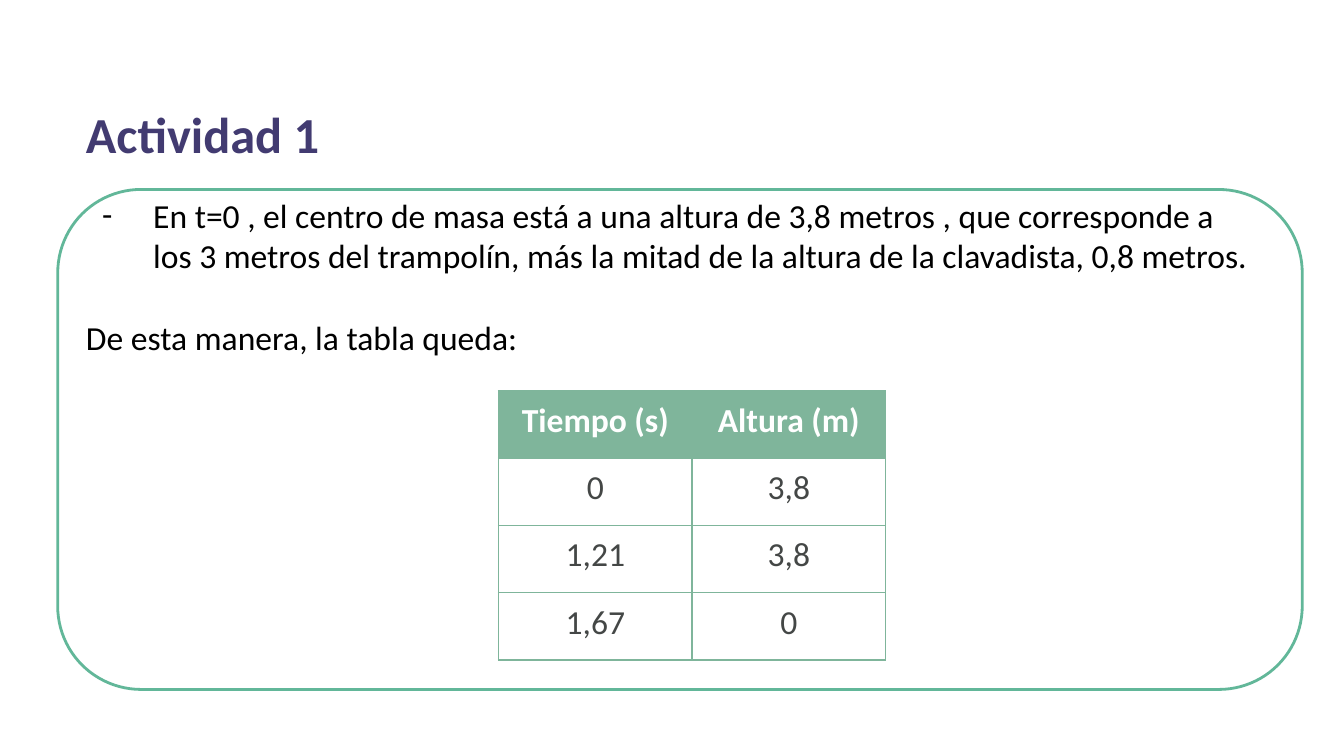
from lxml.etree import SubElement
from pptx import Presentation
from pptx.dml.color import RGBColor
from pptx.enum.shapes import MSO_SHAPE
from pptx.enum.text import PP_ALIGN
from pptx.oxml import parse_xml
from pptx.oxml.ns import nsdecls, qn
from pptx.util import Inches, Pt

TITLE = "Actividad 1"
FINDING = (
    "En t=0 , el centro de masa está a una altura de 3,8 metros , que corresponde a "
    "los 3 metros del trampolín, más la mitad de la altura de la clavadista, 0,8 metros."
)
LEAD_IN = "De esta manera, la tabla queda:"
HEIGHTS = [("Tiempo (s)", "Altura (m)"), ("0", "3,8"), ("1,21", "3,8"), ("1,67", "0")]

COLORS = {
    "title": "423B71",
    "text": "000000",
    "frame": "62B799",
    "table": "7FB59B",
    "header": "FFFFFF",
    "value": "444746",
    "cell": "FFFFFF",
}
FONT = "Calibri"
WIDTH = 10
HEIGHT = WIDTH * 9 / 16
LEFT, TOP = 0.57, 1.41
COLUMN, ROW = 1.44, 0.5


def color(name):
    return RGBColor.from_string(COLORS[name])


def write(para, text, size=18, ink="text", bold=False, align=PP_ALIGN.LEFT, before=0, bullet=None):
    para.alignment = align
    para.space_before = Pt(before)
    if bullet:
        properties = para._p.get_or_add_pPr()
        properties.set("marL", str(Inches(0.5)))
        properties.set("indent", str(Inches(-0.38)))
        tint = SubElement(properties, qn("a:buClr"))
        SubElement(tint, qn("a:srgbClr")).set("val", COLORS[ink])
        SubElement(properties, qn("a:buFont")).set("typeface", FONT)
        SubElement(properties, qn("a:buChar")).set("char", bullet)
    span = para.add_run()
    span.text = text
    span.font.name = FONT
    span.font.size = Pt(size)
    span.font.bold = bold
    span.font.color.rgb = color(ink)


def add_box(page, left, top, width, height):
    box = page.shapes.add_textbox(*map(Inches, (left, top, width, height)))
    frame = box.text_frame
    frame.word_wrap = True
    frame.margin_left = frame.margin_right = Inches(0.07)
    frame.margin_top = frame.margin_bottom = Inches(0.04)
    return frame


def add_borders(cell):
    properties = cell._tc.get_or_add_tcPr()
    for position, side in enumerate(("lnL", "lnR", "lnT", "lnB")):
        border = parse_xml(
            f'<a:{side} {nsdecls("a")} w="{Pt(1)}"><a:solidFill>'
            f'<a:srgbClr val="{COLORS["table"]}"/></a:solidFill></a:{side}>'
        )
        properties.insert(position, border)


def add_heights_table(page):
    rows, columns = len(HEIGHTS), len(HEIGHTS[0])
    table = page.shapes.add_table(
        rows, columns, Inches(3.71), Inches(2.91), Inches(columns * COLUMN), Inches(rows * ROW)
    ).table
    for row, values in enumerate(HEIGHTS):
        header = row == 0
        for column, value in enumerate(values):
            cell = table.cell(row, column)
            cell.margin_left = cell.margin_right = Inches(0.07)
            cell.margin_top = cell.margin_bottom = Inches(0.07)
            cell.fill.solid()
            cell.fill.fore_color.rgb = color("table" if header else "cell")
            add_borders(cell)
            write(cell.text_frame.paragraphs[0], value, ink="header" if header else "value",
                  bold=header, align=PP_ALIGN.CENTER)


def add_frame(page):
    frame = page.shapes.add_shape(
        MSO_SHAPE.ROUNDED_RECTANGLE, Inches(0.43), Inches(TOP), Inches(9.26), Inches(3.72)
    )
    frame.shadow.inherit = False
    frame.fill.background()
    frame.line.color.rgb = color("frame")
    frame.line.width = Pt(1.5)


def main():
    deck = Presentation()
    deck.slide_width, deck.slide_height = Inches(WIDTH), Inches(HEIGHT)
    page = deck.slides.add_slide(deck.slide_layouts[6])

    title = add_box(page, LEFT, 0.73, 6.7, 0.53)
    write(title.paragraphs[0], TITLE, size=27, ink="title", bold=True)

    body = add_box(page, LEFT, TOP, WIDTH - 2 * LEFT, 1.29)
    write(body.paragraphs[0], FINDING, bullet="-")
    write(body.add_paragraph(), LEAD_IN, before=22)

    add_heights_table(page)
    add_frame(page)
    deck.save("out.pptx")


if __name__ == "__main__":
    main()
